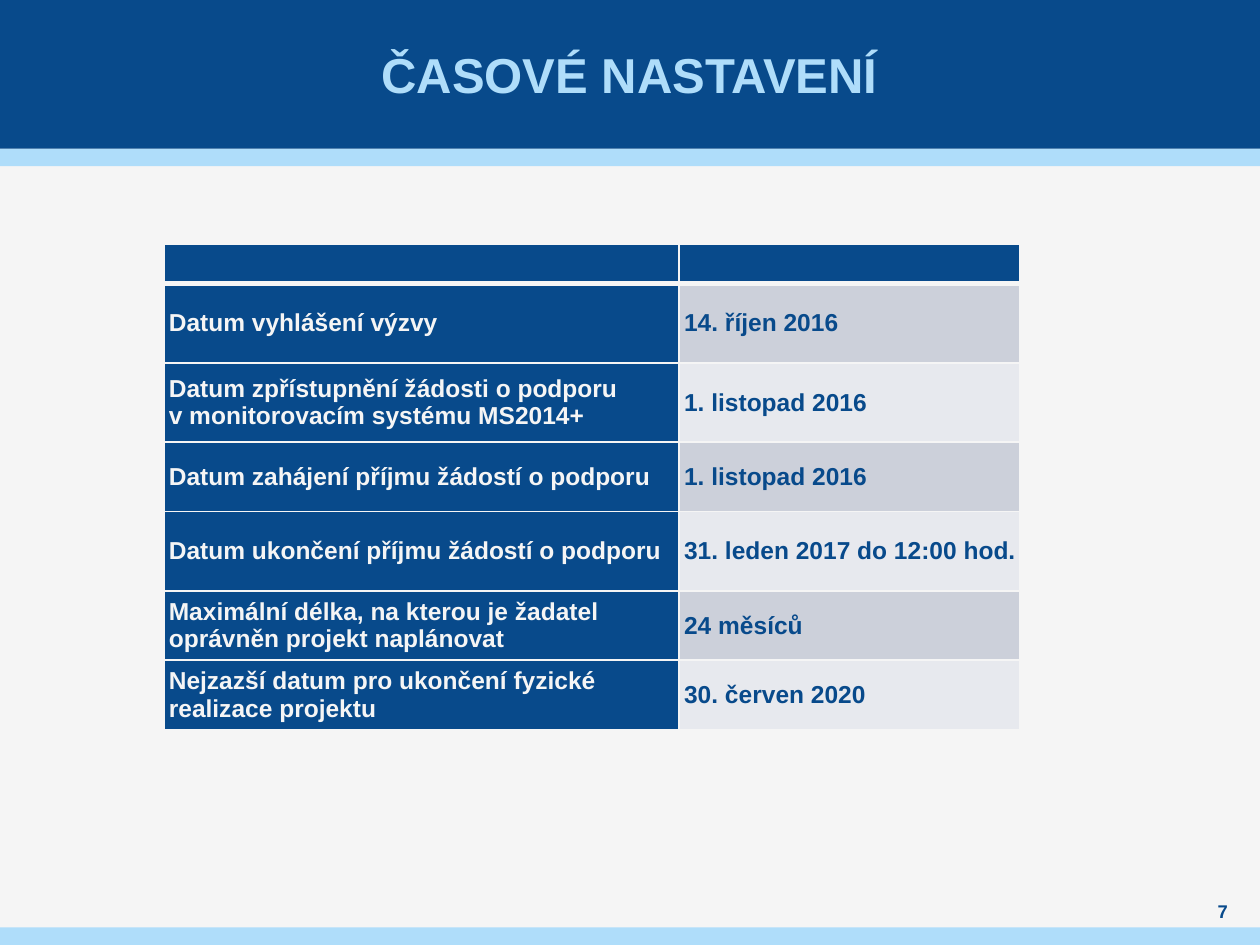
from dataclasses import dataclass

from lxml.etree import SubElement
from pptx import Presentation
from pptx.dml.color import RGBColor as RGB
from pptx.enum.shapes import MSO_SHAPE as Shape
from pptx.enum.text import MSO_ANCHOR as Anchor, PP_ALIGN as Align
from pptx.oxml.ns import qn
from pptx.util import Inches, Pt


@dataclass(frozen=True)
class Theme:
    font: str = "Arial"
    navy: str = "084A8B"
    sky: str = "AFDDFA"
    pale: str = "F5F5F5"
    bands: tuple = ("CCD0DA", "E7E9EE")
    title: float = 28
    body: float = 14
    number: float = 10.5


theme = Theme()


def style(para, size, color):
    font = para.font
    font.name, font.size, font.bold = theme.font, Pt(size), True
    font.color.rgb = RGB.from_string(color)


def paint(cell, color, base):
    """Fill a cell and rule its four sides; base is the bottom width."""
    props = cell._tc.get_or_add_tcPr()
    for side, width in (("L", 1), ("R", 1), ("T", 1), ("B", base)):
        line = SubElement(props, qn(f"a:ln{side}"), w=str(Pt(width)))
        fill = SubElement(line, qn("a:solidFill"))
        SubElement(fill, qn("a:srgbClr"), val=theme.pale)
    cell.fill.solid()
    cell.fill.fore_color.rgb = RGB.from_string(color)


deck = Presentation()
deck.slide_width, deck.slide_height = Inches(10), Inches(7.5)
slide = deck.slides.add_slide(deck.slide_layouts[5])
slide.background.fill.solid()
slide.background.fill.fore_color.rgb = RGB.from_string(theme.pale)

# Header and footer bars
for top, height, color in (
    (1.18, 0.14, theme.sky),
    (0, 1.18, theme.navy),
    (7.36, 0.14, theme.sky),
):
    bar = slide.shapes.add_shape(
        Shape.RECTANGLE, 0, Inches(top), Inches(10), Inches(height))
    bar.shadow.inherit = False
    bar.fill.solid()
    bar.fill.fore_color.rgb = RGB.from_string(color)
    bar.line.fill.background()

# Title, brought in front of the header bar
title = slide.shapes.title
slide.shapes._spTree.append(title._element)
title.left, title.top = Inches(0.39), Inches(0)
title.width, title.height = Inches(9.21), Inches(1.18)

number = slide.shapes.add_textbox(
    Inches(9.45), Inches(7.13), Inches(0.51), Inches(0.2))

for box, text, size, color, side in (
    (title, "ČASOVÉ NASTAVENÍ", theme.title, theme.sky, 0.04),
    (number, "7", theme.number, theme.navy, 0),
):
    frame = box.text_frame
    frame.word_wrap = True
    frame.vertical_anchor = Anchor.MIDDLE
    frame.margin_left = frame.margin_right = Inches(side)
    frame.margin_top = frame.margin_bottom = 0
    para = frame.paragraphs[0]
    para.text = text
    para.alignment = Align.CENTER
    style(para, size, color)

# Schedule
rows = (
    (0.31, "", ""),
    (0.63, "Datum vyhlášení výzvy", "14. říjen 2016"),
    (0.63, "Datum zpřístupnění žádosti o podporu \vv monitorovacím systému MS2014+",
     "1. listopad 2016"),
    (0.55, "Datum zahájení příjmu žádostí o podporu", "1. listopad 2016"),
    (0.63, "Datum ukončení příjmu žádostí o podporu",
     "31. leden 2017 do 12:00 hod."),
    (0.55, "Maximální délka, na kterou je žadatel oprávněn projekt naplánovat",
     "24 měsíců"),
    (0.55, "Nejzazší datum pro ukončení fyzické realizace projektu",
     "30. červen 2020"),
)
table = slide.shapes.add_table(
    len(rows), 2, Inches(1.3), Inches(1.94), Inches(6.79), Inches(3.85)).table
table.horz_banding = False
for col, width in zip(table.columns, (4.09, 2.7)):
    col.width = Inches(width)

for r, (height, *texts) in enumerate(rows):
    table.rows[r].height = Inches(height)
    for c, text in enumerate(texts):
        cell = table.cell(r, c)
        dark = r == 0 or c == 0
        paint(cell, theme.navy if dark else theme.bands[(r - 1) % 2],
              3 if r == 0 else 1)
        cell.vertical_anchor = Anchor.MIDDLE
        cell.margin_left = Inches(0.04)
        cell.margin_right = cell.margin_top = cell.margin_bottom = 0
        para = cell.text_frame.paragraphs[0]
        para.text = text
        style(para, theme.body, theme.pale if dark else theme.navy)

deck.save("out.pptx")
